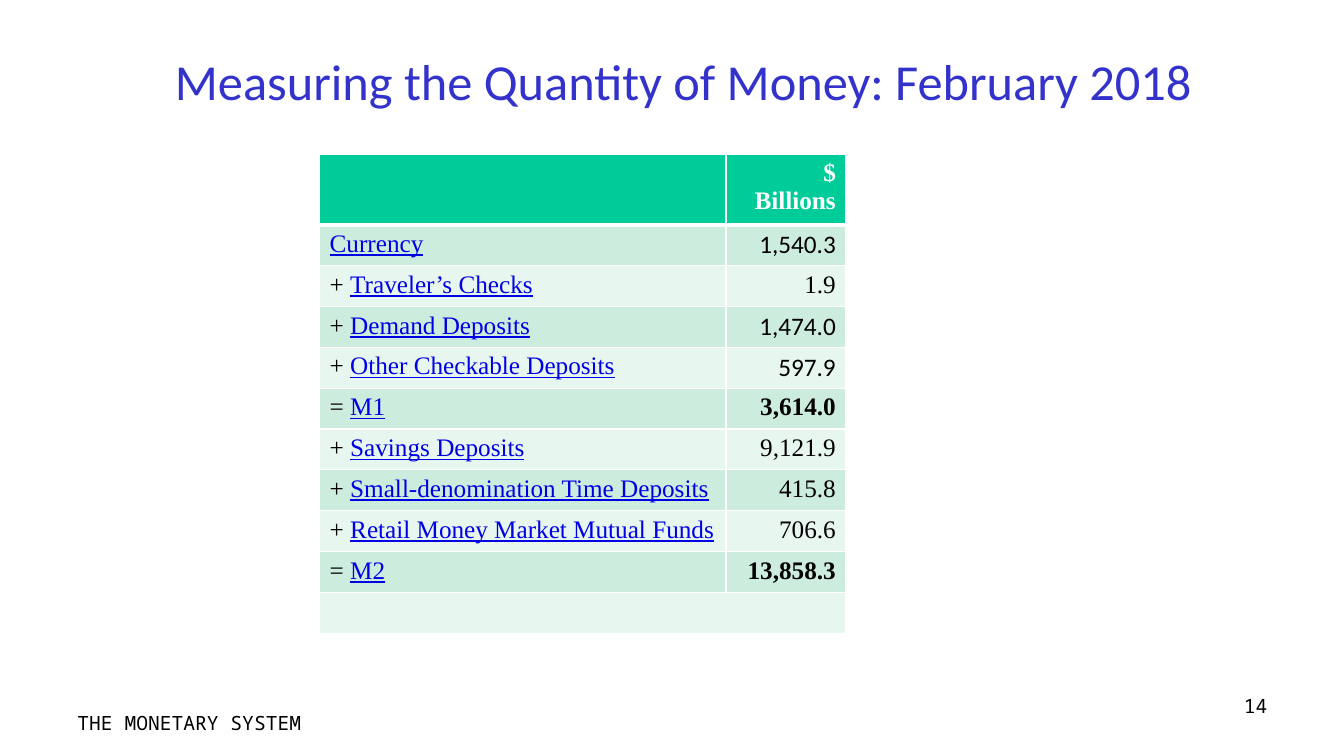
from lxml import etree
from pptx import Presentation
from pptx import util as u
from pptx.dml.color import RGBColor
from pptx.enum import text
from pptx.oxml import ns

SCALE = 9144
BLUE = RGBColor(0x33, 0x33, 0xCC)
LINK = RGBColor(0x00, 0x00, 0xE5)
BLACK = RGBColor(0x00, 0x00, 0x00)
WHITE = RGBColor(0xFF, 0xFF, 0xFF)
GREEN = RGBColor(0x00, 0xCC, 0x99)
BANDS = RGBColor(0xCC, 0xEC, 0xDE), RGBColor(0xE7, 0xF6, 0xEF)
SANS, MONO, SERIF = "Calibri", "Noto Sans Mono", "Times New Roman"
LEFT, MID, RIGHT = text.PP_ALIGN.LEFT, text.PP_ALIGN.CENTER, text.PP_ALIGN.RIGHT
COLS = 403, 119
TALL = 446
ROWS = [
    ("", "Currency", "1,540.3", SANS),
    ("+ ", "Traveler’s Checks", "1.9", SERIF),
    ("+ ", "Demand Deposits", "1,474.0", SANS),
    ("+ ", "Other Checkable Deposits", "597.9", SANS),
    ("= ", "M1", "3,614.0", SERIF),
    ("+ ", "Savings Deposits", "9,121.9", SERIF),
    ("+ ", "Small-denomination Time Deposits", "415.8", SERIF),
    ("+ ", "Retail Money Market Mutual Funds", "706.6", SERIF),
    ("= ", "M2", "13,858.3", SERIF),
]


def px(n):
    """Turn px into EMU."""
    return u.Emu(n * SCALE)


def style(run, face, size, color, bold=False, under=False):
    """Format one run."""
    font = run.font
    font.name, font.size, font.bold, font.underline = face, u.Pt(size), bold, under
    font.color.rgb = color


def label(slide, box, words, face, size, color, align=LEFT):
    """Add a text box with one line and return its frame."""
    frame = slide.shapes.add_textbox(*map(px, box)).text_frame
    frame.word_wrap = True
    frame.text = words
    line = frame.paragraphs[0]
    line.alignment = align
    style(line.runs[0], face, size, color)
    return frame


def paint(cell, fill, top=1, base=1):
    """Give a cell its fill and white borders."""
    props = cell._tc.get_or_add_tcPr()
    for side, width in (("L", 1), ("R", 1), ("T", top), ("B", base)):
        edge = etree.SubElement(props, ns.qn("a:ln" + side), w=str(u.Pt(width)))
        solid = etree.SubElement(edge, ns.qn("a:solidFill"))
        etree.SubElement(solid, ns.qn("a:srgbClr"), val=str(WHITE))
    cell.fill.solid()
    cell.fill.fore_color.rgb = fill


def number(cell, words, face, color, bold):
    """Write a right-aligned entry in a cell."""
    cell.text_frame.text = words
    line = cell.text_frame.paragraphs[0]
    line.alignment = RIGHT
    style(line.runs[0], face, 18, color, bold)


def item(cell, sign, name):
    """Write a sign and an underlined name in a cell."""
    line = cell.text_frame.paragraphs[0]
    line.text = sign
    for run in line.runs:
        style(run, SERIF, 18, BLACK)
    run = line.add_run()
    run.text = name
    style(run, SERIF, 18, LINK, under=True)


def ledger(slide):
    """Add the table of money measures."""
    count = len(ROWS) + 2
    table = slide.shapes.add_table(
        count, 2, px(317), px(153), px(sum(COLS)), px(TALL)).table
    table.horz_banding = False
    for col, wide in zip(table.columns, COLS):
        col.width = px(wide)
    for i, row in enumerate(table.rows):
        row.height = px(TALL) // count
        for cell in row.cells:
            fill = BANDS[(i - 1) % 2] if i else GREEN
            paint(cell, fill, 3 if i == 1 else 1, 1 if i else 3)
    number(table.cell(0, 1), "$ Billions", SERIF, WHITE, True)
    for i, (sign, name, value, face) in enumerate(ROWS, 1):
        item(table.cell(i, 0), sign, name)
        number(table.cell(i, 1), value, face, BLACK, sign == "= ")
    table.cell(count - 1, 0).merge(table.cell(count - 1, 1))


def main():
    """Build and save the slide."""
    deck = Presentation()
    deck.slide_width, deck.slide_height = px(1333), px(750)
    slide = deck.slides.add_slide(deck.slide_layouts[6])
    title = label(slide, (67, 17, 1222, 133),
                  "Measuring the Quantity of Money: February 2018",
                  SANS, 36, BLUE, MID)
    title.vertical_anchor = text.MSO_ANCHOR.MIDDLE
    title.paragraphs[0].line_spacing = 0.9
    label(slide, (67, 700, 467, 35), "THE MONETARY SYSTEM", MONO, 14, BLACK)
    label(slide, (956, 683, 311, 52), "14", MONO, 14, BLACK, RIGHT)
    ledger(slide)
    deck.save("out.pptx")


if __name__ == "__main__":
    main()
